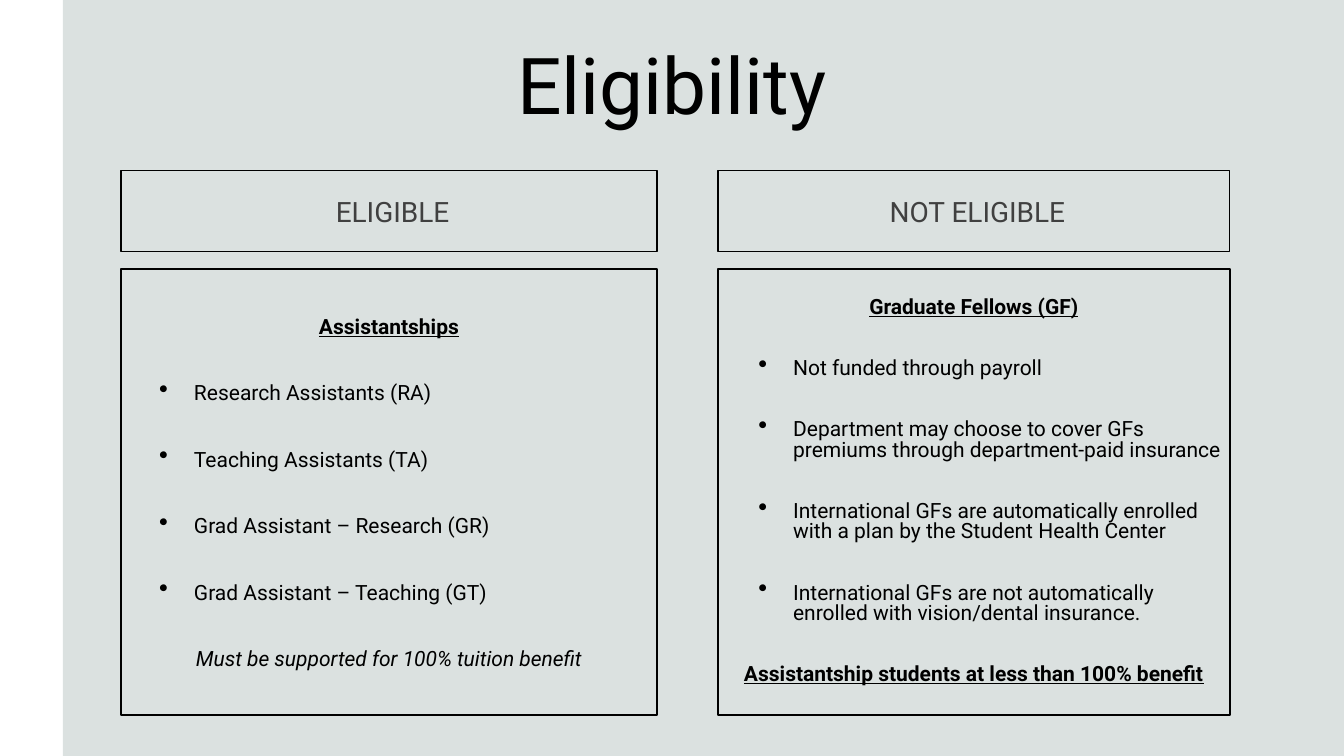
"""Build the eligibility comparison slide."""
from dataclasses import dataclass

from lxml import etree
from pptx import Presentation
from pptx import util as u
from pptx.dml import color
from pptx.enum import shapes, text
from pptx.oxml import ns

FONT = "Roboto"
BLACK = "000000"
HEADER_TOP, HEADER_HEIGHT = 3.38, 1.61
PANEL_TOP, PANEL_HEIGHT = 5.33, 8.86
HEADING = {"bold": True, "underline": True}
NOTE = {"italic": True}


@dataclass(frozen=True)
class Column:
    left: float
    width: float
    header: str
    heading: str
    items: tuple[str, ...]
    closing: str
    closing_format: dict
    inset: float
    line_spacing: float


COLUMNS = (
    Column(2.4, 10.64, "ELIGIBLE", "Assistantships",
           ("Research Assistants (RA)", "Teaching Assistants (TA)",
            "Grad Assistant – Research (GR)", "Grad Assistant – Teaching (GT)"),
           "Must be supported for 100% tuition benefit", NOTE, 0.06, 1.0),
    Column(14.25, 10.15, "NOT ELIGIBLE", "Graduate Fellows (GF)",
           ("Not funded through payroll",
            "Department may choose to cover GFs premiums through department-paid insurance",
            "International GFs are automatically enrolled with a plan by the Student Health Center",
            "International GFs are not automatically enrolled with vision/dental insurance."),
           "Assistantship students at less than 100% benefit", HEADING, 0.1, 0.8),
)


def rgb(value: str) -> color.RGBColor:
    return color.RGBColor.from_string(value)


def set_frame(shape, inset: float):
    frame = shape.text_frame
    margin = u.Inches(inset)
    settings = {"word_wrap": True, "vertical_anchor": text.MSO_ANCHOR.MIDDLE,
                "margin_left": margin, "margin_right": margin}
    for name, value in settings.items():
        setattr(frame, name, value)
    return frame


def add_box(slide, left: float, top: float, width: float, height: float,
            line_width: float, inset: float = 0.1):
    shape = slide.shapes.add_shape(shapes.MSO_SHAPE.RECTANGLE,
                                   *map(u.Inches, (left, top, width, height)))
    shape.shadow.inherit = False
    shape.fill.background()
    shape.line.color.rgb = rgb(BLACK)
    shape.line.width = u.Pt(line_width)
    return set_frame(shape, inset)


def indent(paragraph, margin: float, hanging: float) -> None:
    properties = paragraph._p.get_or_add_pPr()
    properties.set("marL", str(u.Inches(margin)))
    properties.set("indent", str(-u.Inches(hanging)))


def add_bullet(paragraph) -> None:
    indent(paragraph, 1.39, 0.69)
    properties = paragraph._p.get_or_add_pPr()
    etree.SubElement(properties, ns.qn("a:buSzPct")).set("val", "125000")
    etree.SubElement(properties, ns.qn("a:buChar")).set("char", "•")


def write(paragraph, words: str, size: float, hex_color: str = BLACK,
          align=text.PP_ALIGN.CENTER, **formats) -> None:
    paragraph.alignment = align
    run = paragraph.add_run()
    run.text = words
    run.font.color.rgb = rgb(hex_color)
    for name, value in {"name": FONT, "size": u.Pt(size), **formats}.items():
        setattr(run.font, name, value)


def add_header(slide, column: Column) -> None:
    frame = add_box(slide, column.left, HEADER_TOP, column.width, HEADER_HEIGHT, 2.25)
    paragraph = frame.paragraphs[0]
    indent(paragraph, 0.14, 0)
    write(paragraph, column.header, 40, "404040")


def add_panel(slide, column: Column) -> None:
    frame = add_box(slide, column.left, PANEL_TOP, column.width, PANEL_HEIGHT, 3, column.inset)
    heading = frame.paragraphs[0]
    heading.line_spacing = column.line_spacing
    write(heading, column.heading, 30, **HEADING)
    for words in (*column.items, column.closing):
        paragraph = frame.add_paragraph()
        paragraph.space_before = u.Pt(59)
        paragraph.line_spacing = column.line_spacing
        if words == column.closing:
            write(paragraph, words, 30, **column.closing_format)
        else:
            paragraph.level = 1
            add_bullet(paragraph)
            write(paragraph, words, 30, align=text.PP_ALIGN.LEFT)


def add_backdrop(slide) -> None:
    shape = slide.shapes.add_shape(shapes.MSO_SHAPE.RECTANGLE,
                                   *map(u.Inches, (1.25, 0, 25.42, 15)))
    shape.shadow.inherit = False
    shape.fill.solid()
    shape.fill.fore_color.rgb = rgb("DBE1E0")
    shape.line.fill.background()


def add_title(slide) -> None:
    shape = slide.shapes.add_textbox(*map(u.Inches, (1.85, 0.39, 22.97, 2.5)))
    write(set_frame(shape, 0.06).paragraphs[0], "Eligibility", 112)


def main() -> None:
    presentation = Presentation()
    presentation.slide_width = u.Inches(26.67)
    presentation.slide_height = u.Inches(15)
    slide = presentation.slides.add_slide(presentation.slide_layouts[6])
    add_backdrop(slide)
    add_title(slide)
    for column in COLUMNS:
        add_header(slide, column)
        add_panel(slide, column)
    presentation.save("out.pptx")


if __name__ == "__main__":
    main()
